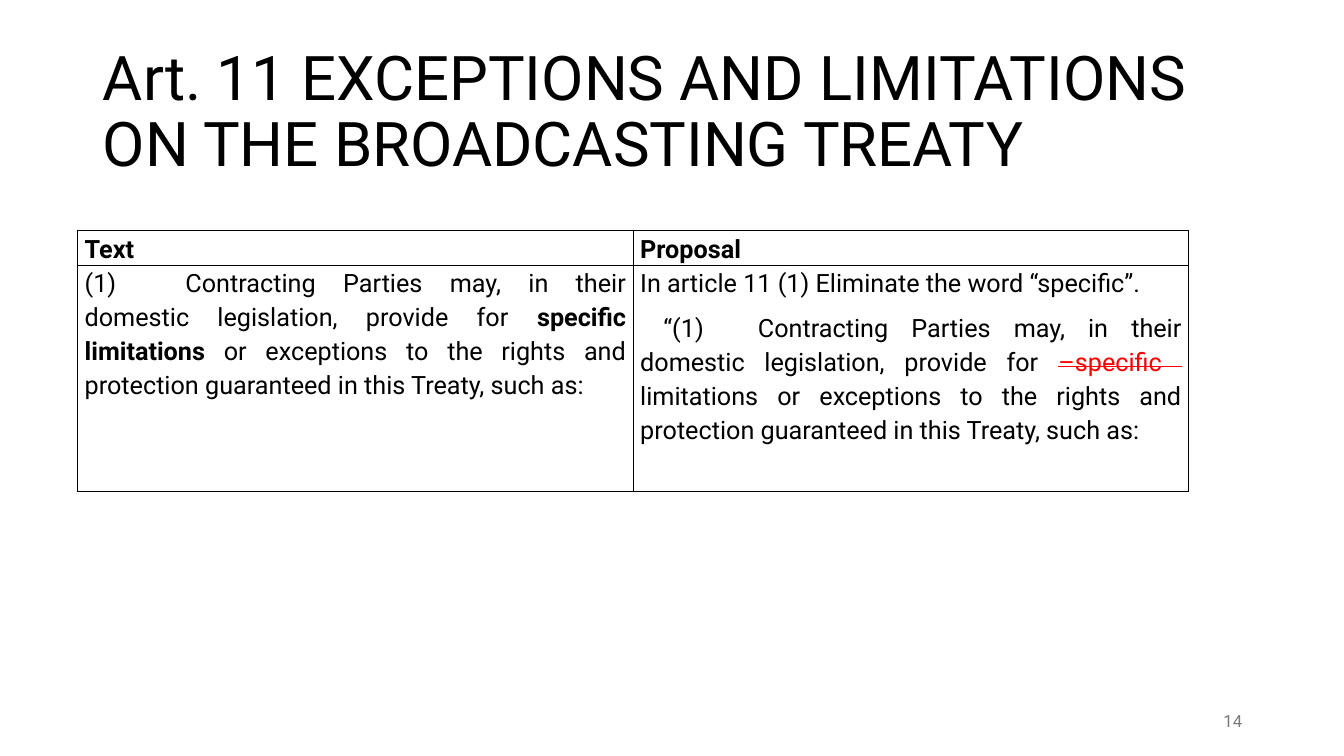
from lxml import etree
from pptx import Presentation
from pptx import util as u
from pptx.dml import color
from pptx.enum import text
from pptx.oxml import ns

WIDTH, HEIGHT = 13.33, 7.5
FONT = "Roboto"
BLACK, RED, GREY = "000000", "FF0000", "797979"


def format_run(run, size, hex_color=BLACK, bold=False):
    run.font.name = FONT
    run.font.size = u.Pt(size)
    run.font.bold = bold
    run.font.color.rgb = color.RGBColor.from_string(hex_color)


def draw_borders(cell, hex_color=BLACK, width=u.Pt(1)):
    properties = cell._tc.get_or_add_tcPr()
    for position, side in enumerate(("lnL", "lnR", "lnT", "lnB")):
        line = etree.Element(ns.qn(f"a:{side}"), w=str(width))
        fill = etree.SubElement(line, ns.qn("a:solidFill"))
        etree.SubElement(fill, ns.qn("a:srgbClr"), val=hex_color)
        properties.insert(position, line)


presentation = Presentation()
presentation.slide_width = u.Inches(WIDTH)
presentation.slide_height = u.Inches(HEIGHT)
slide = presentation.slides.add_slide(presentation.slide_layouts[5])

# Title
title = slide.shapes.title
title.left, title.top = u.Inches(0.92), u.Inches(0.4)
title.width, title.height = u.Inches(11.5), u.Inches(1.45)
title.text_frame.text = "Art. 11 EXCEPTIONS AND LIMITATIONS ON THE BROADCASTING TREATY"
title.text_frame.auto_size = text.MSO_AUTO_SIZE.NONE
title.text_frame.vertical_anchor = text.MSO_ANCHOR.MIDDLE
paragraph = title.text_frame.paragraphs[0]
paragraph.alignment = text.PP_ALIGN.LEFT
paragraph.line_spacing = 0.9
format_run(paragraph.runs[0], 44)

# Table wording: rows > cells > paragraphs > (wording, style) runs
provision = "(1)\tContracting Parties may, in their domestic legislation, provide for "
ending = "or exceptions to the rights and protection guaranteed in this Treaty, such as:"
rows = [
    [
        [[("Text", "bold")]],
        [[("Proposal", "bold")]],
    ],
    [
        [[(provision, ""), ("specific limitations ", "bold"), (ending, "")]],
        [
            [("In article 11 (1) Eliminate the word “specific”.", "")],
            [(" “" + provision, ""), ("–specific  ", "struck"),
             ("limitations " + ending, "")],
        ],
    ],
]

# Table
column_width, row_heights = 5.51, (0.34, 2.25)
table = slide.shapes.add_table(
    len(rows), 2, u.Inches(0.77), u.Inches(2.29),
    u.Inches(2 * column_width), u.Inches(sum(row_heights))).table
table.horz_banding = False
for column in table.columns:
    column.width = u.Inches(column_width)

for row_index, row in enumerate(rows):
    table.rows[row_index].height = u.Inches(row_heights[row_index])
    for column_index, paragraphs in enumerate(row):
        cell = table.cell(row_index, column_index)
        cell.fill.background()
        cell.margin_left = cell.margin_right = u.Inches(0.07)
        cell.margin_top = cell.margin_bottom = 0
        draw_borders(cell)
        for index, runs in enumerate(paragraphs):
            frame = cell.text_frame
            paragraph = frame.add_paragraph() if index else frame.paragraphs[0]
            paragraph.alignment = text.PP_ALIGN.JUSTIFY if row_index else text.PP_ALIGN.LEFT
            paragraph.line_spacing = 1.15
            paragraph.space_after = u.Pt(8)
            # Tab stop one inch in, after the clause number
            tabs = etree.SubElement(paragraph._p.get_or_add_pPr(), ns.qn("a:tabLst"))
            etree.SubElement(tabs, ns.qn("a:tab"), pos=str(u.Inches(1)), algn="l")
            for wording, style in runs:
                run = paragraph.add_run()
                run.text = wording
                struck = style == "struck"
                format_run(run, 18, RED if struck else BLACK, style == "bold")
                if struck:
                    run.font._element.set("strike", "sngStrike")

# Slide number
number = slide.shapes.add_textbox(u.Inches(9.42), u.Inches(6.95), u.Inches(3), u.Inches(0.4))
number.text_frame.text = "14"
number.text_frame.word_wrap = True
number.text_frame.vertical_anchor = text.MSO_ANCHOR.MIDDLE
paragraph = number.text_frame.paragraphs[0]
paragraph.alignment = text.PP_ALIGN.RIGHT
format_run(paragraph.runs[0], 12, GREY)

presentation.save("out.pptx")
